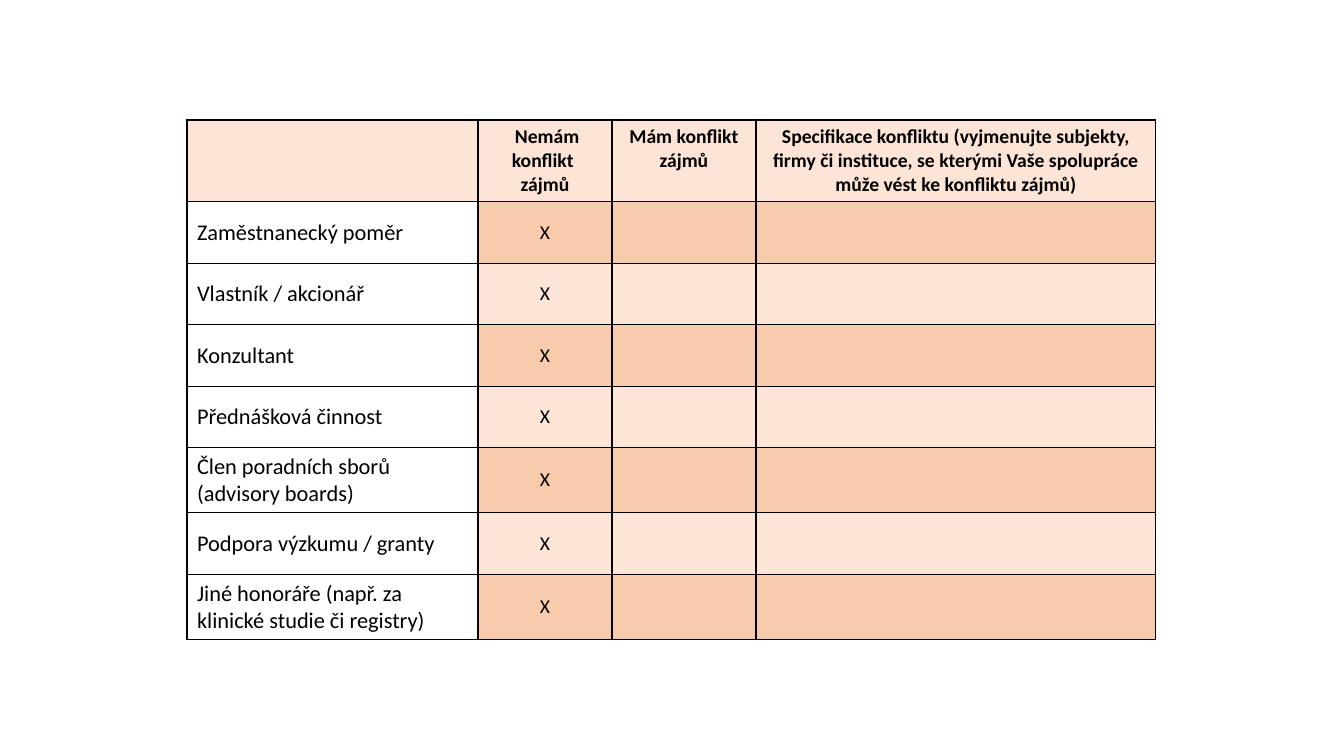
from dataclasses import dataclass

from lxml import etree
from pptx import Presentation
from pptx.dml.color import RGBColor
from pptx.enum.text import MSO_ANCHOR, PP_ALIGN
from pptx.oxml.ns import qn
from pptx.util import Emu, Pt

LEFT, CENTER = PP_ALIGN.LEFT, PP_ALIGN.CENTER
TOP, MIDDLE = MSO_ANCHOR.TOP, MSO_ANCHOR.MIDDLE
EMU_PER_PX = 914400 / 100.8

HEADINGS = [
    "",
    " Nemám konflikt \nzájmů",
    "Mám konflikt zájmů",
    "Specifikace konfliktu (vyjmenujte subjekty, firmy či instituce, "
    "se kterými Vaše spolupráce může vést ke konfliktu zájmů)",
]
RELATIONSHIPS = [
    ("Zaměstnanecký poměr", 62),
    ("Vlastník / akcionář", 61),
    ("Konzultant", 62),
    ("Přednášková činnost", 61),
    ("Člen poradních sborů (advisory boards)", 65),
    ("Podpora výzkumu / granty", 62),
    ("Jiné honoráře (např. za klinické studie či registry)", 65),
]
COLUMN_WIDTHS = [291, 134, 144, 400]
HEADER_HEIGHT = 81


@dataclass(frozen=True)
class Theme:
    """Colours, font and type sizes of the slide."""
    font: str = "Calibri"
    ink: str = "000000"
    plain: str = "FFFFFF"
    pale: str = "FCE4D6"
    peach: str = "F8CBAD"
    label_size: int = 16
    small_size: int = 14
    border: int = 1


def px(length):
    """Turn pixels into EMU."""
    return Emu(round(length * EMU_PER_PX))


def write(frame, text, *, theme, size, bold=False, align=LEFT):
    """Fill a text frame with one paragraph per line."""
    for number, line in enumerate(text.split("\n")):
        paragraph = frame.add_paragraph() if number else frame.paragraphs[0]
        paragraph.alignment = align
        run = paragraph.add_run()
        run.text = line
        run.font.name = theme.font
        run.font.size = Pt(size)
        run.font.bold = bold
        run.font.color.rgb = RGBColor.from_string(theme.ink)


class SlideBuilder:
    """Draws styled elements on the current slide."""

    def __init__(self, slide, theme):
        """Keep the slide and its theme."""
        self.slide = slide
        self.theme = theme

    def table(self, left, top, widths, heights):
        """Add an unstyled table with the given column and row sizes."""
        table = self.slide.shapes.add_table(
            len(heights), len(widths), px(left), px(top),
            px(sum(widths)), px(sum(heights))).table
        table.first_row = table.horz_banding = False
        for column, width in zip(table.columns, widths):
            column.width = px(width)
        for row, height in zip(table.rows, heights):
            row.height = px(height)
        return table

    def cell(self, cell, fill, text="", anchor=MIDDLE, **text_format):
        """Fill, border and write one cell."""
        cell.fill.solid()
        cell.fill.fore_color.rgb = RGBColor.from_string(fill)
        cell.vertical_anchor = anchor
        self.borders(cell)
        if text:
            write(cell.text_frame, text, theme=self.theme, **text_format)

    def borders(self, cell):
        """Draw a solid line on all four sides of a cell."""
        properties = cell._tc.get_or_add_tcPr()
        for position, side in enumerate(("a:lnL", "a:lnR", "a:lnT", "a:lnB")):
            line = etree.Element(qn(side), w=str(Pt(self.theme.border)))
            solid = etree.SubElement(line, qn("a:solidFill"))
            etree.SubElement(solid, qn("a:srgbClr"), val=self.theme.ink)
            properties.insert(position, line)


def main():
    """Build the conflict of interest slide."""
    presentation = Presentation()
    presentation.slide_width, presentation.slide_height = px(1344), px(756)
    theme = Theme()
    blank = presentation.slide_layouts[6]
    builder = SlideBuilder(presentation.slides.add_slide(blank), theme)

    heights = [HEADER_HEIGHT] + [height for _, height in RELATIONSHIPS]
    declaration = builder.table(187, 120, COLUMN_WIDTHS, heights)
    for column, heading in enumerate(HEADINGS):
        builder.cell(declaration.cell(0, column), theme.pale, heading, TOP,
                     size=theme.small_size, bold=True, align=CENTER)
    for row, (relationship, _) in enumerate(RELATIONSHIPS, start=1):
        band = theme.peach if row % 2 else theme.pale
        builder.cell(declaration.cell(row, 0), theme.plain, relationship,
                     size=theme.label_size)
        for column, mark in enumerate(("X", "", ""), start=1):
            builder.cell(declaration.cell(row, column), band, mark,
                         size=theme.small_size, align=CENTER)
    presentation.save("out.pptx")


if __name__ == "__main__":
    main()
